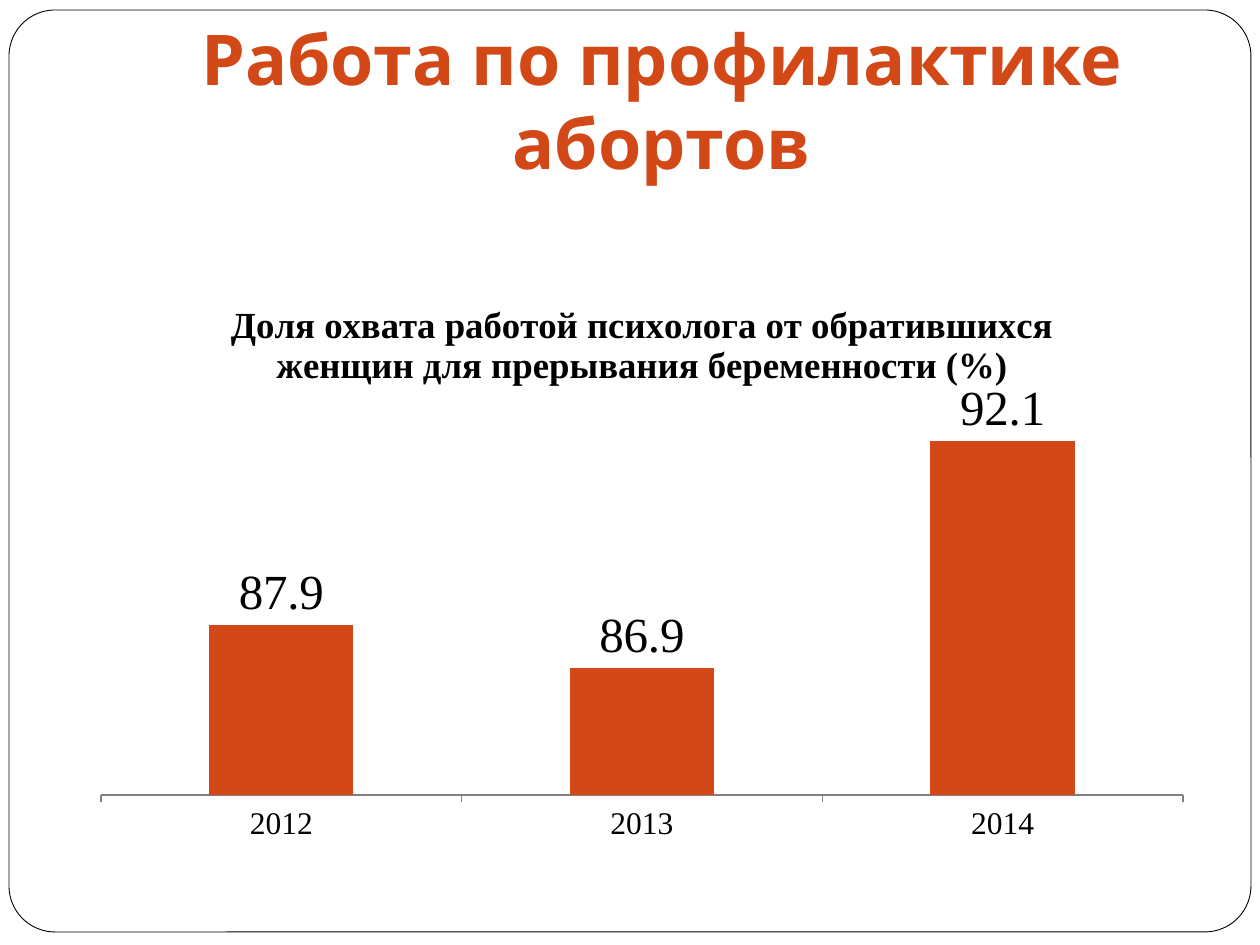
from lxml import etree
from pptx import Presentation
from pptx import util as u
from pptx.chart import data
from pptx.dml.color import RGBColor
from pptx.enum import chart as ch, shapes, text

COLORS = {"accent": "D34817", "ink": "000000", "paper": "FFFFFF", "axis": "808080"}
FONTS = {"heading": "Karla", "chart": "Times New Roman"}


class Deck:
    """Holds the style and the current slide, and draws each kind of element."""

    def __init__(self, width, height):
        self.deck = Presentation()
        self.deck.slide_width, self.deck.slide_height = self.px(width), self.px(height)
        self.slide = self.deck.slides.add_slide(self.deck.slide_layouts[5])

    def px(self, length):
        return u.Emu(round(length * u.Inches(1) / 126))

    def color(self, name):
        return RGBColor.from_string(COLORS[name])

    def style(self, font, face, size, color, bold=False):
        font.name, font.size, font.bold = FONTS[face], u.Pt(size), bold
        font.color.rgb = self.color(color)

    def frame(self, *box):
        border = self.slide.shapes.add_shape(
            shapes.MSO_SHAPE.ROUNDED_RECTANGLE, *map(self.px, box))
        border.adjustments[0] = 0.05
        border.shadow.inherit = False
        border.fill.solid()
        border.fill.fore_color.rgb = self.color("paper")
        border.line.color.rgb = self.color("ink")
        border.line.width = u.Pt(0.5)
        self.slide.shapes._spTree.insert(2, border._element)

    def title(self, words, *box):
        heading = self.slide.shapes.title
        heading.left, heading.top, heading.width, heading.height = map(self.px, box)
        body = heading.text_frame
        body.word_wrap = True
        body.auto_size = text.MSO_AUTO_SIZE.NONE
        body.vertical_anchor = text.MSO_ANCHOR.BOTTOM
        body.margin_left = body.margin_right = body.margin_bottom = u.Inches(0.1)
        body.margin_top = u.Inches(0.05)
        line = body.paragraphs[0]
        line.alignment = text.PP_ALIGN.CENTER
        run = line.add_run()
        run.text = words
        self.style(run.font, "heading", 40, "accent", True)

    def columns(self, caption, shares, box, plot_box):
        table = data.CategoryChartData(number_format="0.0")
        table.categories = list(shares)
        table.add_series("Series 1", list(shares.values()))
        chart = self.slide.shapes.add_chart(
            ch.XL_CHART_TYPE.COLUMN_CLUSTERED, *map(self.px, box), table).chart
        self.style(chart.font, "chart", 18, "ink")
        chart.has_legend = False
        chart.has_title = True
        run = chart.chart_title.text_frame.paragraphs[0].add_run()
        run.text = caption
        self.style(run.font, "chart", 21, "ink", True)
        chart.chart_title.include_in_layout = False

        years, percent = chart.category_axis, chart.value_axis
        years.major_tick_mark = ch.XL_TICK_MARK.OUTSIDE
        years.format.line.color.rgb = self.color("axis")
        percent.visible = False
        percent.has_major_gridlines = False
        percent.minimum_scale, percent.maximum_scale = 84, 93

        plot = chart.plots[0]
        plot.gap_width = 150
        plot.vary_by_categories = False
        coverage = plot.series[0]
        coverage.format.fill.solid()
        coverage.format.fill.fore_color.rgb = self.color("accent")
        labels = coverage.data_labels
        labels.show_value = True
        labels.position = ch.XL_LABEL_POSITION.OUTSIDE_END
        self.style(labels.font, "chart", 28, "ink")
        self.place_plot(chart, box, plot_box)

    def place_plot(self, chart, box, plot_box):
        area = chart._chartSpace.chart.plotArea
        space = etree.QName(area).namespace
        for old in area.findall(f"{{{space}}}layout"):
            area.remove(old)
        layout = etree.Element(f"{{{space}}}layout")
        manual = etree.SubElement(layout, f"{{{space}}}manualLayout")
        left, top, width, height = box
        x, y, w, h = plot_box
        parts = {"layoutTarget": "inner", "xMode": "edge", "yMode": "edge",
                 "x": (x - left) / width, "y": (y - top) / height,
                 "w": w / width, "h": h / height}
        for tag, value in parts.items():
            etree.SubElement(manual, f"{{{space}}}{tag}", val=str(value))
        area.insert(0, layout)

    def save(self):
        self.deck.save("out.pptx")


def main():
    deck = Deck(1260, 945)
    deck.frame(9, 10, 1242, 922)
    deck.title("Работа по профилактике абортов", 126, 38, 1071, 158)
    deck.columns(
        "Доля охвата работой психолога от обратившихся женщин "
        "для прерывания беременности (%)",
        {"2012": 87.9, "2013": 86.9, "2014": 92.1},
        box=(78, 276, 1128, 577), plot_box=(101, 402, 1082, 393))
    deck.save()


if __name__ == "__main__":
    main()
